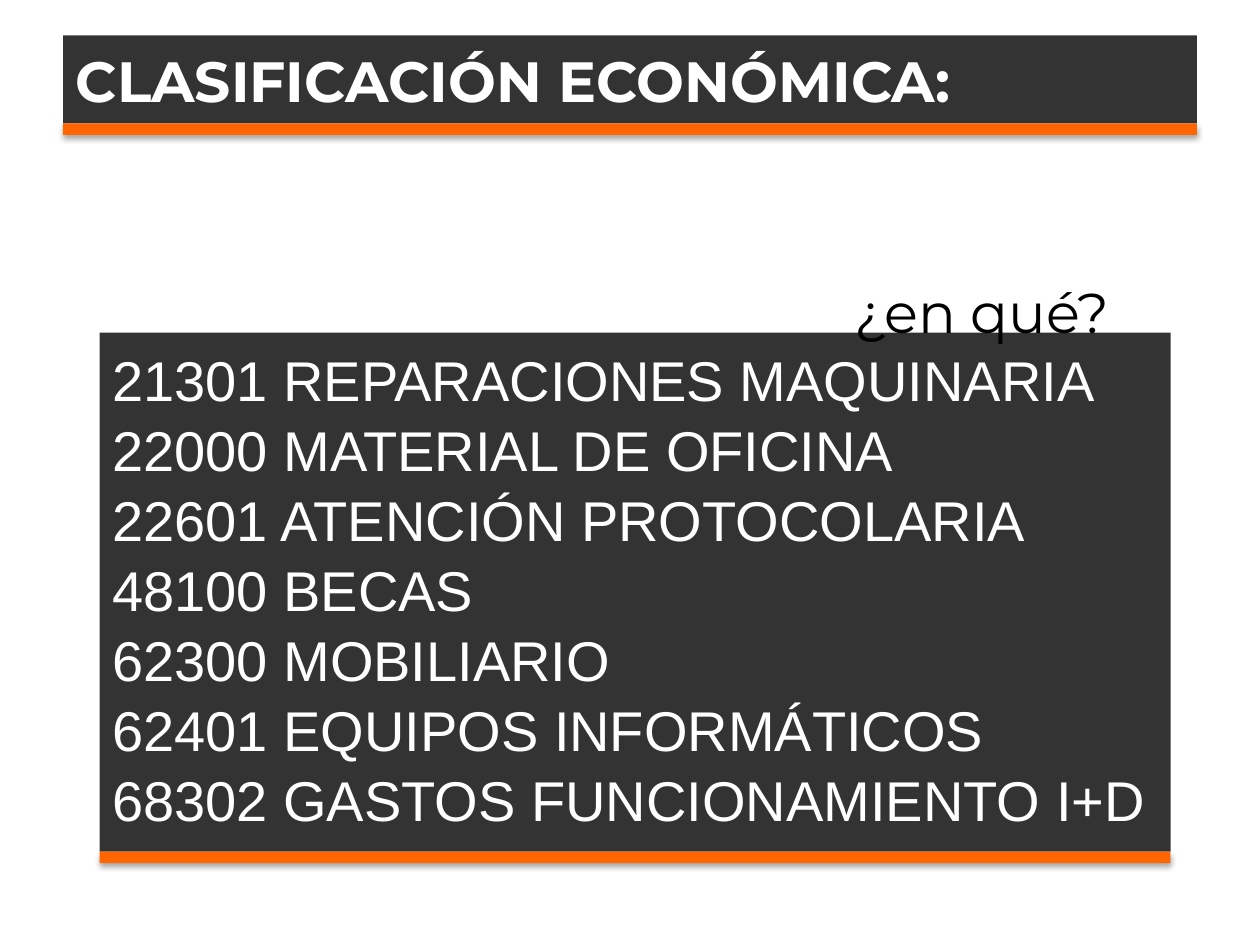
from dataclasses import dataclass

import pptx
import pptx.dml.color
import pptx.enum.shapes
import pptx.enum.text
import pptx.oxml
import pptx.oxml.ns
import pptx.util

Inches = pptx.util.Inches
Pt = pptx.util.Pt
RGB = pptx.dml.color.RGBColor
Align = pptx.enum.text.PP_ALIGN
Anchor = pptx.enum.text.MSO_ANCHOR


@dataclass(frozen=True)
class Theme:
    dark: RGB = RGB(0x33, 0x33, 0x33)
    accent: RGB = RGB(0xFF, 0x65, 0x01)
    white: RGB = RGB(0xFF, 0xFF, 0xFF)
    black: RGB = RGB(0, 0, 0)
    head: str = "Montserrat"
    body: str = "Arial"
    title_size: float = 32.4
    text_size: float = 32


@dataclass(frozen=True)
class Panel:
    left: float
    top: float
    width: float
    height: float


THEME = Theme()
TITLE = Panel(0.5, 0.28, 9, 0.7)
LIST = Panel(0.79, 2.64, 8.5, 4.12)
ASIDE = Panel(6.4, 2.15, 2.79, 0.64)
BAR = 0.09

ITEMS = [
    "21301 REPARACIONES MAQUINARIA",
    "22000 MATERIAL DE OFICINA",
    "22601 ATENCIÓN PROTOCOLARIA",
    "48100 BECAS",
    "62300 MOBILIARIO",
    "62401 EQUIPOS INFORMÁTICOS",
    "68302 GASTOS FUNCIONAMIENTO I+D",
]


def place(shape, area: Panel) -> None:
    shape.left, shape.top = Inches(area.left), Inches(area.top)
    shape.width, shape.height = Inches(area.width), Inches(area.height)


def paint(shape, color: RGB) -> None:
    shape.fill.solid()
    shape.fill.fore_color.rgb = color
    shape.line.fill.background()


def add_run(para, text: str, font: str, size: float, color: RGB,
            bold: bool = False) -> None:
    run = para.add_run()
    run.text = text
    run.font.name = font
    run.font.size = Pt(size)
    run.font.bold = bold
    run.font.color.rgb = color


def set_frame(shape, anchor: Anchor):
    frame = shape.text_frame
    frame.word_wrap = True
    frame.auto_size = pptx.enum.text.MSO_AUTO_SIZE.NONE
    frame.vertical_anchor = anchor
    return frame


def add_shadow(shape) -> None:
    shape.shadow.inherit = False
    effects = shape._element.spPr.find(pptx.oxml.ns.qn("a:effectLst"))
    effects.append(pptx.oxml.parse_xml(
        f'<a:outerShdw {pptx.oxml.ns.nsdecls("a")} blurRad="{Pt(3.1)}" '
        f'dist="{Pt(1.8)}" dir="5400000" rotWithShape="0">'
        '<a:srgbClr val="000000"><a:alpha val="35000"/></a:srgbClr>'
        '</a:outerShdw>'))


def add_bar(slide, panel: Panel) -> None:
    """Underline a panel with a shadowed accent strip."""
    bar = slide.shapes.add_shape(
        pptx.enum.shapes.MSO_SHAPE.RECTANGLE, 0, 0, 0, 0)
    place(bar, Panel(panel.left, panel.top + panel.height, panel.width, BAR))
    paint(bar, THEME.accent)
    add_shadow(bar)


def fill_title(slide) -> None:
    title = slide.shapes.title
    place(title, TITLE)
    paint(title, THEME.dark)
    para = set_frame(title, Anchor.MIDDLE).paragraphs[0]
    para.alignment = Align.LEFT
    add_run(para, "CLASIFICACIÓN ECONÓMICA:", THEME.head,
            THEME.title_size, THEME.white, bold=True)


def fill_list(slide) -> None:
    body = slide.placeholders[1]
    place(body, LIST)
    paint(body, THEME.dark)
    frame = set_frame(body, Anchor.TOP)
    frame.margin_top = Inches(0.1)
    for index, item in enumerate(ITEMS):
        para = frame.add_paragraph() if index else frame.paragraphs[0]
        para.space_before = Pt(0)
        para.space_after = Pt(1.6)
        props = para._p.get_or_add_pPr()
        props.set("marL", "0")
        props.set("indent", "0")
        props.append(pptx.oxml.parse_xml(
            f'<a:buNone {pptx.oxml.ns.nsdecls("a")}/>'))
        add_run(para, item, THEME.body, THEME.text_size, THEME.white)


def add_aside(slide) -> None:
    box = slide.shapes.add_textbox(0, 0, 0, 0)
    place(box, ASIDE)
    para = set_frame(box, Anchor.TOP).paragraphs[0]
    para.alignment = Align.CENTER
    add_run(para, "¿en qué?", THEME.head, THEME.text_size, THEME.black)


def main() -> None:
    deck = pptx.Presentation()
    deck.slide_width, deck.slide_height = Inches(10), Inches(7.5)
    slide = deck.slides.add_slide(deck.slide_layouts[1])
    fill_title(slide)
    fill_list(slide)
    for panel in (TITLE, LIST):
        add_bar(slide, panel)
    add_aside(slide)
    deck.save("out.pptx")


if __name__ == "__main__":
    main()
